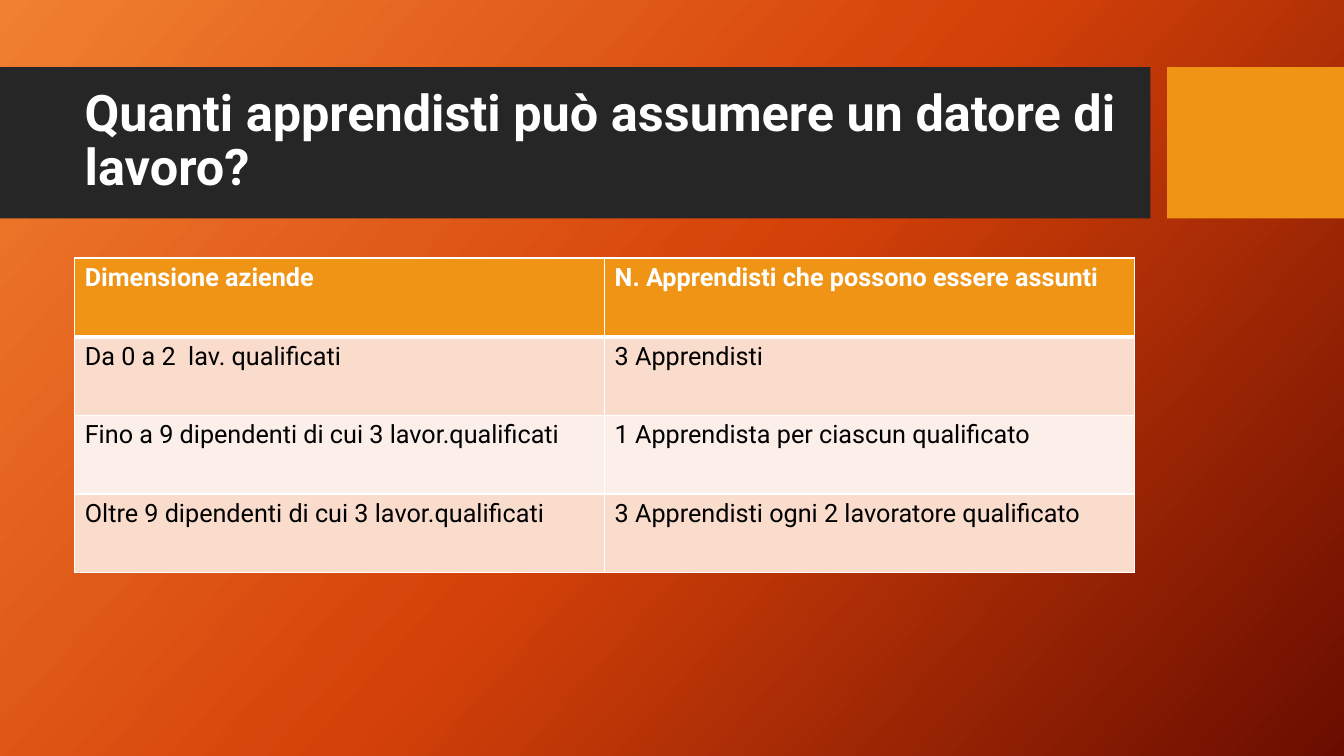
from copy import deepcopy

from lxml import etree
from pptx import Presentation
from pptx.dml.color import RGBColor
from pptx.enum import shapes, text
from pptx.oxml.ns import qn
from pptx.util import Pt

WHITE, BLACK, DARK, AMBER = "FFFFFF", "000000", "262626", "F09415"
BANDS = ["F9DCCC", "FCEEE8"]
STOPS = [(0, "F18031"), (0.5, "D54209"), (1, "6A0D00")]
TITLE = "Quanti apprendisti può assumere un datore di lavoro?"
ROWS = [
    ("Dimensione aziende", "N. Apprendisti che possono essere assunti"),
    ("Da 0 a 2  lav. qualificati", "3 Apprendisti"),
    ("Fino a 9 dipendenti di cui 3 lavor.qualificati",
     "1 Apprendista per ciascun qualificato"),
    ("Oltre 9 dipendenti di cui 3 lavor.qualificati",
     "3 Apprendisti ogni 2 lavoratore qualificato"),
]
LEFT, WIDTH = 53.4, 757
ROW_H = 56.2


def color(code):
    return RGBColor.from_string(code)


def paint(fill, code):
    fill.solid()
    fill.fore_color.rgb = color(code)


def write(frame, words, code, **style):
    para = frame.paragraphs[0]
    run = para.add_run()
    run.text = words
    for key, value in {"name": "Roboto", **style}.items():
        setattr(run.font, key, value)
    run.font.color.rgb = color(code)
    return para


def backdrop(slide):
    fill = slide.background.fill
    fill.gradient()
    fill.gradient_angle = 318
    # The default gradient has two stops; add the third
    stops = slide.element.find(".//" + qn("a:gsLst"))
    stops.append(deepcopy(stops[-1]))
    for stop, (pos, code) in zip(fill.gradient_stops, STOPS):
        stop.position = pos
        stop.color.rgb = color(code)


def block(slide, left, width, code):
    box = slide.shapes.add_shape(
        shapes.MSO_SHAPE.RECTANGLE, Pt(left), Pt(48), Pt(width), Pt(108))
    box.shadow.inherit = False
    paint(box.fill, code)
    box.line.fill.background()


def heading(slide):
    box = slide.shapes.add_textbox(Pt(LEFT), Pt(59), Pt(WIDTH), Pt(85))
    frame = box.text_frame
    frame.word_wrap = True
    frame.vertical_anchor = text.MSO_ANCHOR.MIDDLE
    para = write(frame, TITLE, WHITE, size=Pt(36), bold=True)
    para.line_spacing = 0.9


def border(cell, widths):
    props = cell._tc.get_or_add_tcPr()
    for spot, (side, width) in enumerate(widths.items()):
        line = etree.Element(qn("a:ln" + side), w=str(Pt(width)))
        fill = etree.SubElement(line, qn("a:solidFill"))
        etree.SubElement(fill, qn("a:srgbClr"), val=WHITE)
        props.insert(spot, line)


def grid(slide):
    table = slide.shapes.add_table(
        len(ROWS), 2, Pt(LEFT), Pt(184.3), Pt(WIDTH),
        Pt(ROW_H * len(ROWS))).table
    for col in table.columns:
        col.width = Pt(WIDTH / 2)
    for r, row in enumerate(ROWS):
        table.rows[r].height = Pt(ROW_H)
        head = r == 0
        for c, words in enumerate(row):
            cell = table.cell(r, c)
            paint(cell.fill, AMBER if head else BANDS[(r - 1) % 2])
            write(cell.text_frame, words, WHITE if head else BLACK,
                  size=Pt(18), bold=head)
            border(cell, {"L": 1, "R": 1, "T": 3 if r == 1 else 1,
                          "B": 3 if head else 1})


def main():
    deck = Presentation()
    deck.slide_width, deck.slide_height = Pt(960), Pt(540)
    slide = deck.slides.add_slide(deck.slide_layouts[6])
    backdrop(slide)
    # Title band and accent
    block(slide, 0, 821.8, DARK)
    block(slide, 833.6, 126.4, AMBER)
    heading(slide)
    # Table of limits by company size
    grid(slide)
    deck.save("out.pptx")


if __name__ == "__main__":
    main()
